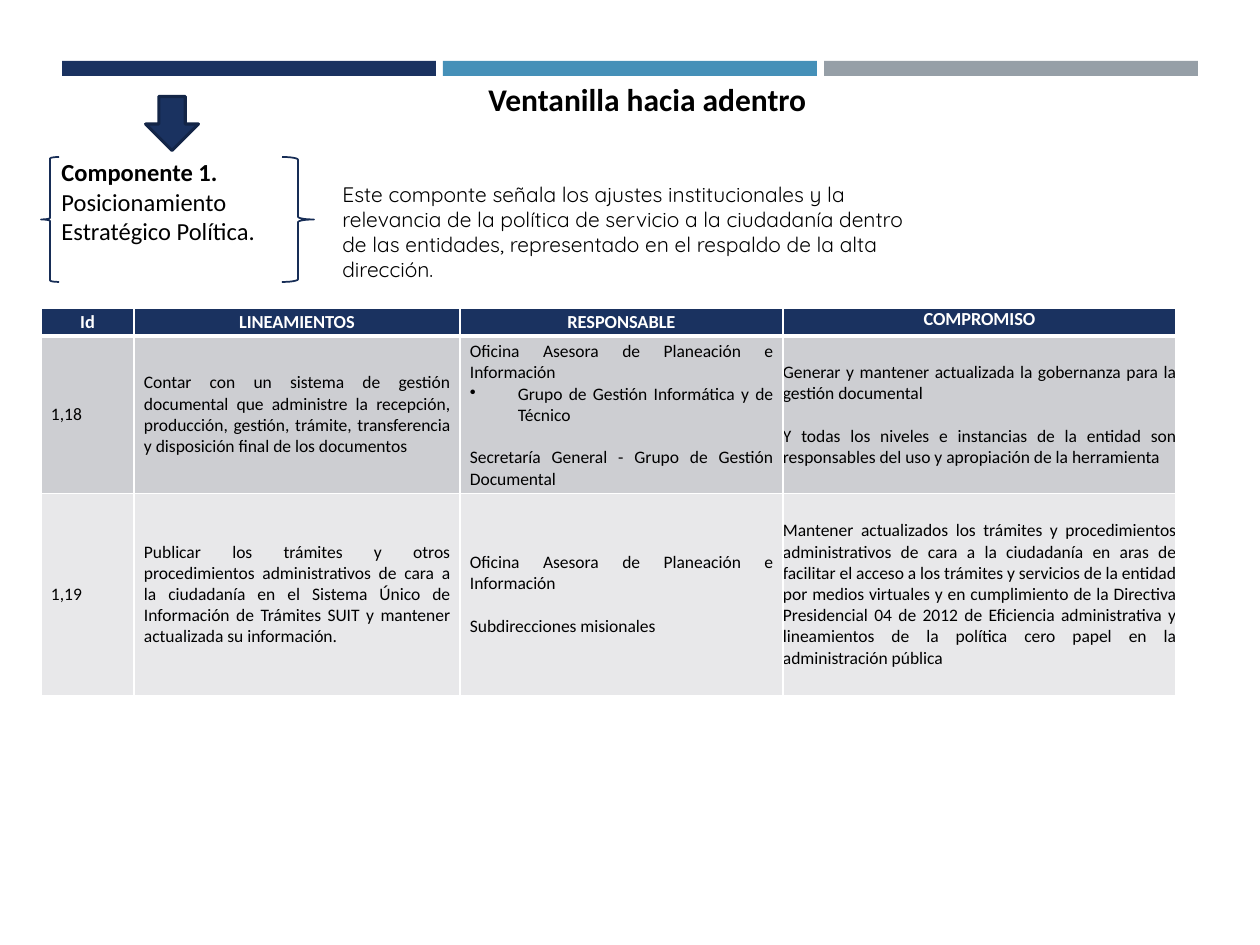
from lxml.etree import SubElement
from pptx import Presentation
from pptx.dml.color import RGBColor
from pptx.enum.shapes import MSO_SHAPE
from pptx.enum.text import MSO_ANCHOR, PP_ALIGN
from pptx.oxml.ns import qn
from pptx.util import Emu, Pt

NAVY = RGBColor(0x1A, 0x32, 0x60)
BLUE = RGBColor(0x45, 0x90, 0xB8)
GRAY = RGBColor(0x96, 0x9F, 0xA7)
BRACE = RGBColor(0x17, 0x2D, 0x56)
ARROW_EDGE = RGBColor(0x13, 0x25, 0x47)
ROW_DARK = RGBColor(0xCD, 0xCE, 0xD2)
ROW_LIGHT = RGBColor(0xE8, 0xE8, 0xEA)
BLACK = RGBColor(0, 0, 0)
WHITE = RGBColor(0xFF, 0xFF, 0xFF)

HEADINGS = ["Id", "LINEAMIENTOS", "RESPONSABLE", "COMPROMISO"]
OFFICE = "Oficina Asesora de Planeación e Información"
GAP = "\n"
BULLET = "•"
COMMITMENTS = [
    [
        ["1,18"],
        ["Contar con un sistema de gestión documental que administre la recepción, producción, gestión, "
         "trámite, transferencia y disposición final de los documentos"],
        [OFFICE, BULLET + "Grupo de Gestión Informática y de Técnico",
         GAP + "Secretaría General - Grupo de Gestión Documental"],
        ["Generar y mantener actualizada la gobernanza para la gestión documental",
         GAP + "Y todas los niveles e instancias de la entidad son responsables del uso y apropiación "
         "de la herramienta "],
    ],
    [
        ["1,19"],
        ["Publicar los trámites y otros procedimientos administrativos de cara a la ciudadanía en el "
         "Sistema Único de Información de Trámites SUIT y mantener actualizada su información."],
        [OFFICE, GAP + "Subdirecciones misionales"],
        ["Mantener actualizados los trámites y procedimientos administrativos de cara a la ciudadanía en "
         "aras de facilitar el acceso a los trámites y servicios de la entidad por medios virtuales y en "
         "cumplimiento de la Directiva Presidencial 04 de 2012 de Eficiencia administrativa y "
         "lineamientos de la política cero papel en la administración pública"],
    ],
]


def px(length):
    return Emu(round(length * 914400 / 126))


class Page:
    """Holds the style and the current slide, and draws each kind of element."""

    font = "Calibri"

    def __init__(self, deck):
        self.slide = deck.slides.add_slide(deck.slide_layouts[6])

    def style(self, span, size, color=BLACK, bold=False, font=None):
        span.font.name = font or self.font
        span.font.size = Pt(size)
        span.font.bold = bold
        span.font.color.rgb = color

    def shape(self, kind, bounds, fill=None, line=None, weight=1, rotation=0):
        shape = self.slide.shapes.add_shape(kind, *map(px, bounds))
        shape.shadow.inherit = False
        shape.rotation = rotation
        if fill is None:
            shape.fill.background()
        else:
            shape.fill.solid()
            shape.fill.fore_color.rgb = fill
        if line is None:
            shape.line.fill.background()
        else:
            shape.line.color.rgb = line
            shape.line.width = Pt(weight)

    def text(self, bounds, spans, size, font=None):
        box = self.slide.shapes.add_textbox(*map(px, bounds))
        box.text_frame.word_wrap = True
        para = box.text_frame.paragraphs[0]
        for words, bold in spans:
            span = para.add_run()
            span.text = words
            self.style(span, size, bold=bold, font=font)

    def border(self, cell, top, bottom):
        properties = cell._tc.get_or_add_tcPr()
        for side, weight in (("L", 1), ("R", 1), ("T", top), ("B", bottom)):
            edge = SubElement(properties, qn(f"a:ln{side}"), w=str(Pt(weight)))
            SubElement(SubElement(edge, qn("a:solidFill")), qn("a:srgbClr"), val=str(WHITE))

    def cell(self, cell, lines, fill, margins, header, top, bottom):
        self.border(cell, top, bottom)
        cell.fill.solid()
        cell.fill.fore_color.rgb = fill
        cell.margin_left = cell.margin_right = px(margins[0])
        cell.margin_top = cell.margin_bottom = px(margins[1])
        cell.vertical_anchor = MSO_ANCHOR.TOP if header else MSO_ANCHOR.MIDDLE
        for index, line in enumerate(lines):
            frame = cell.text_frame
            para = frame.add_paragraph() if index else frame.paragraphs[0]
            para.text = line.lstrip(GAP + BULLET)
            para.alignment = PP_ALIGN.CENTER if header else PP_ALIGN.JUSTIFY
            if line.startswith(GAP):
                para.space_before = Pt(12.2)
            if line.startswith(BULLET):
                properties = para._p.get_or_add_pPr()
                properties.set("marL", str(px(48)))
                properties.set("indent", str(-px(48)))
                SubElement(properties, qn("a:buChar"), char=BULLET)
            for span in para.runs:
                self.style(span, 10.5 if header else 10, WHITE if header else BLACK, header)

    def table(self, bounds, widths, heights, rows, fills):
        table = self.slide.shapes.add_table(len(rows), len(widths), *map(px, bounds)).table
        for column, width in zip(table.columns, widths):
            column.width = px(width)
        for row, height in zip(table.rows, heights):
            row.height = px(height)
        for r, row in enumerate(rows):
            for c, lines in enumerate(row):
                header = r == 0
                margins = (0, 0) if c == len(widths) - 1 else (5, 3) if header else (10, 5)
                self.cell(table.cell(r, c), lines, fills[r], margins, header,
                          top=3 if r == 1 else 1, bottom=3 if header else 1)


def main():
    deck = Presentation()
    deck.slide_width, deck.slide_height = px(1260), px(945)
    page = Page(deck)

    for index, color in enumerate((NAVY, BLUE, GRAY)):
        page.shape(MSO_SHAPE.RECTANGLE, (62 + 381 * index, 61, 374, 15), fill=color)

    page.text((49, 151, 244, 102),
              [("Componente 1. ", True), ("Posicionamiento Estratégico Política.", False)], 14)
    page.shape(MSO_SHAPE.RIGHT_BRACE, (282, 157, 32, 125), line=BRACE)
    page.shape(MSO_SHAPE.LEFT_BRACE, (41, 157, 18, 125), line=BRACE)
    page.shape(MSO_SHAPE.RIGHT_ARROW, (145, 97, 54, 53), NAVY, ARROW_EDGE, 1.75, rotation=90)
    page.text((330, 175, 610, 115),
              [("Este componte señala los ajustes institucionales y la relevancia de la política de "
                "servicio a la ciudadanía dentro de las entidades, representado en el respaldo de la "
                "alta dirección.", False)], 12, "Quicksand")
    page.text((476, 74, 383, 50), [("Ventanilla hacia adentro", True)], 18)

    page.table((41, 308, 1135, 385), (93, 326, 323, 393), (26, 157, 202),
               [[[heading] for heading in HEADINGS], *COMMITMENTS], (NAVY, ROW_DARK, ROW_LIGHT))
    deck.save("out.pptx")


if __name__ == "__main__":
    main()
